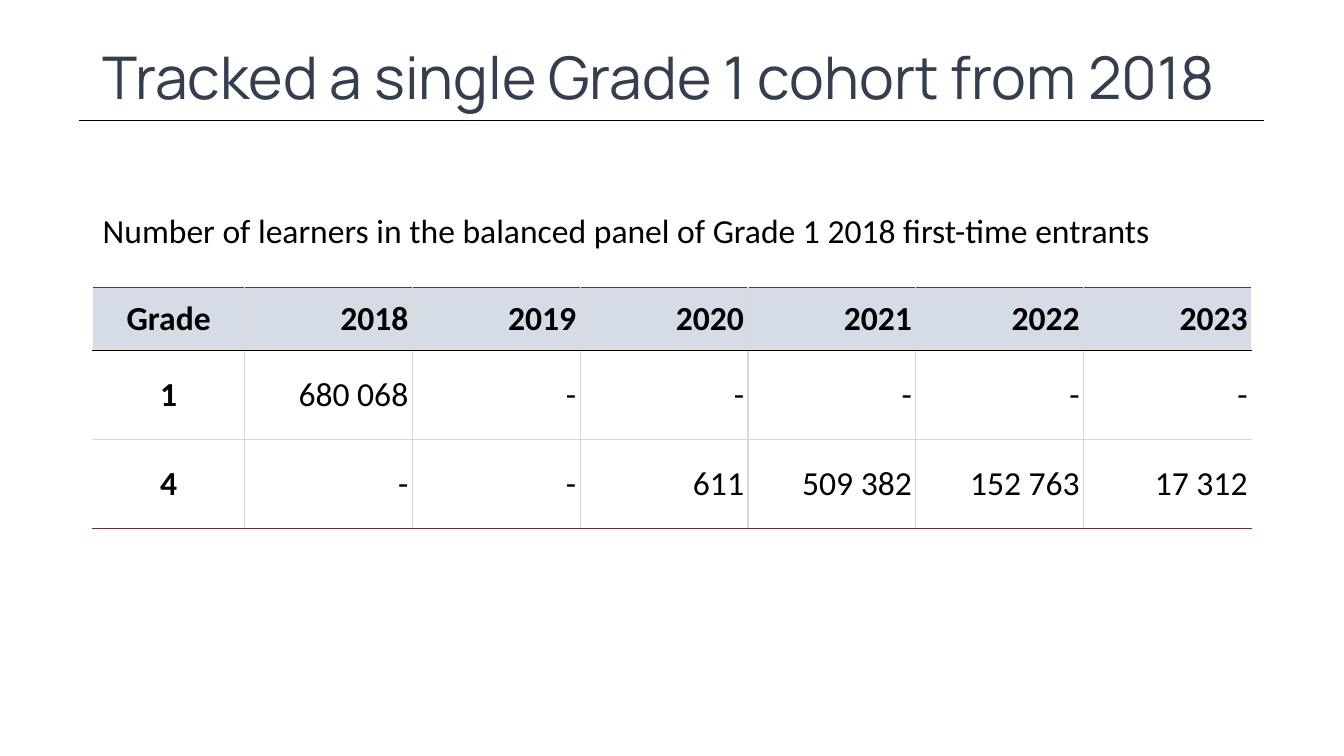
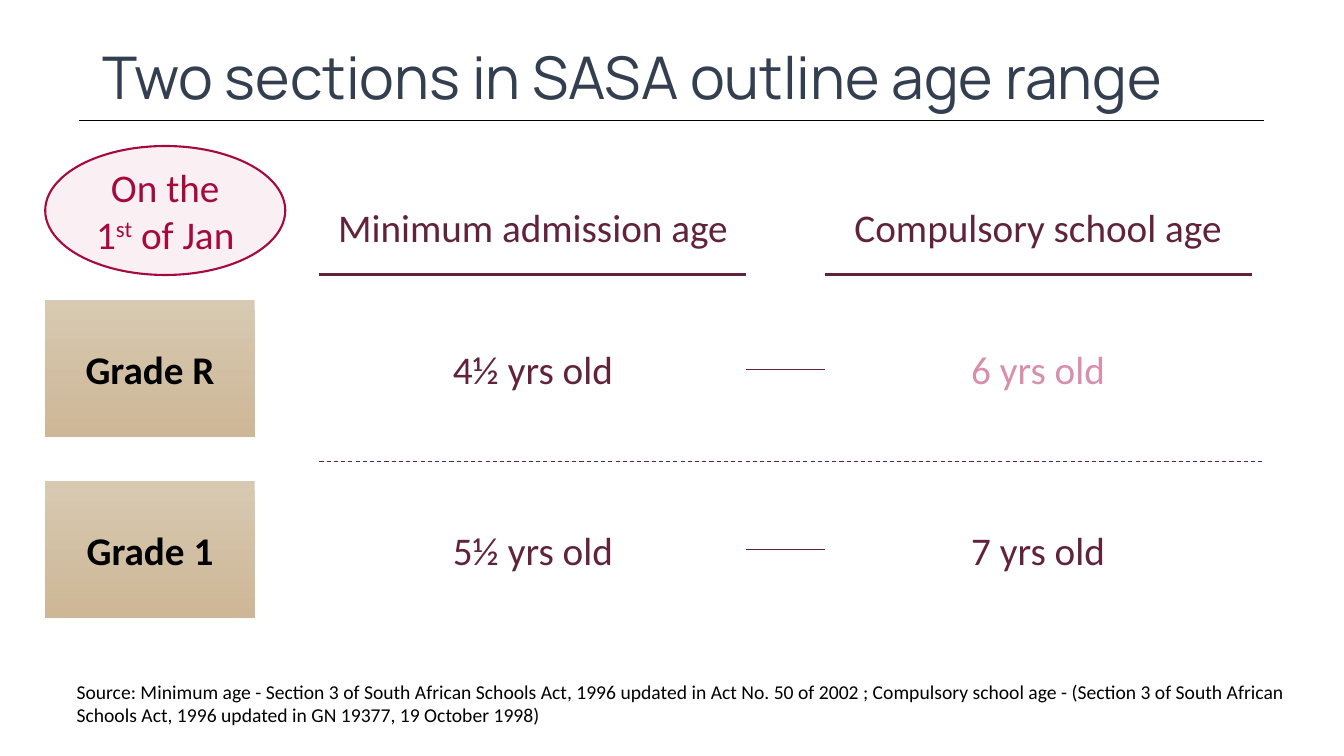
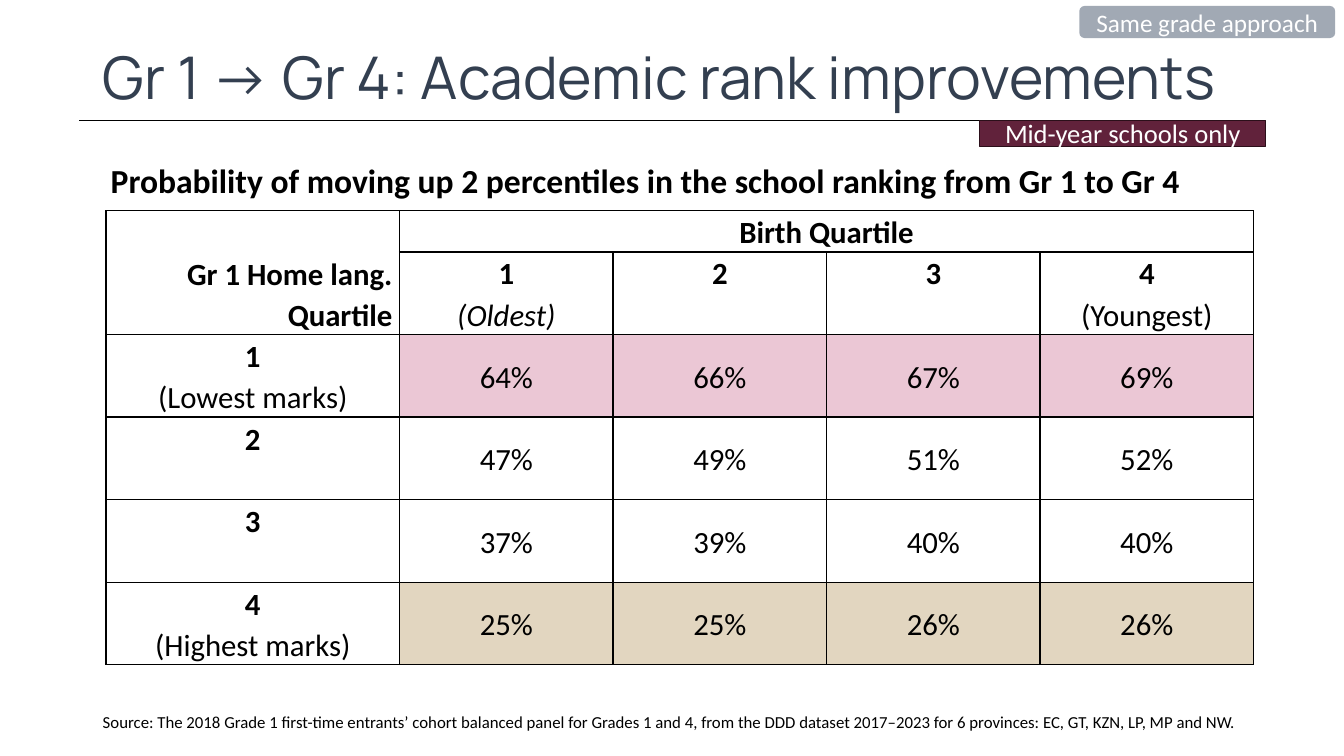
from lxml import etree
from pptx import Presentation
from pptx.dml.color import RGBColor
from pptx.enum.dml import MSO_LINE
from pptx.enum.shapes import MSO_CONNECTOR, MSO_SHAPE
from pptx.enum.text import MSO_ANCHOR, MSO_AUTO_SIZE, PP_ALIGN
from pptx.oxml.ns import qn
from pptx.util import Cm, Pt

LEFT, MID, RIGHT = PP_ALIGN.LEFT, PP_ALIGN.CENTER, PP_ALIGN.RIGHT
TOP, HALF, BASE = MSO_ANCHOR.TOP, MSO_ANCHOR.MIDDLE, MSO_ANCHOR.BOTTOM
RECT, ROUND, OVAL = MSO_SHAPE.RECTANGLE, MSO_SHAPE.ROUNDED_RECTANGLE, MSO_SHAPE.OVAL
STRAIGHT, DASH, FIXED = MSO_CONNECTOR.STRAIGHT, MSO_LINE.DASH, MSO_AUTO_SIZE.NONE

BLACK = RGBColor(0x00, 0x00, 0x00)
WHITE = RGBColor(0xFF, 0xFF, 0xFF)
NAVY = RGBColor(0x33, 0x3F, 0x50)
SLATE = RGBColor(0x44, 0x54, 0x6A)
MIST = RGBColor(0xD6, 0xDC, 0xE5)
GREY = RGBColor(0xD9, 0xD9, 0xD9)
RUST = RGBColor(0x64, 0x33, 0x35)
WINE = RGBColor(0x61, 0x22, 0x3B)
DARK = RGBColor(0x2B, 0x0F, 0x1A)
RED = RGBColor(0xA6, 0x0A, 0x3D)
BLUSH = RGBColor(0xFA, 0xF0, 0xF4)
ROSE = RGBColor(0xD8, 0x8F, 0xAC)
PINK = RGBColor(0xEB, 0xC7, 0xD5)
SAND = RGBColor(0xE2, 0xD6, 0xC0)
LIGHT = RGBColor(0xD8, 0xC9, 0xB2)
TAN = RGBColor(0xCD, 0xB7, 0x96)


class Deck:
    """Holds the shared style and the current slide."""

    head = "Manrope"
    body = "Calibri"

    def __init__(self):
        self.show = Presentation()
        self.show.slide_width, self.show.slide_height = Cm(33.87), Cm(19.05)
        self.slide = None

    def put(self, frame, paras, size, tint=BLACK, side=LEFT, lead=None, font=body):
        """Set paragraphs, each a list of (text, marks) runs with marks b, i or s."""
        if isinstance(paras, str):
            paras = [[(paras, "")]]
        for at, runs in enumerate(paras):
            para = frame.add_paragraph() if at else frame.paragraphs[0]
            para.alignment = side
            if lead:
                para.line_spacing = lead
            for text, marks in runs:
                run = para.add_run()
                run.text = text
                run.font.name, run.font.size = font, Pt(size)
                run.font.color.rgb = tint
                run.font.bold, run.font.italic = "b" in marks, "i" in marks
                if "s" in marks:
                    run.font._element.set("baseline", "30000")

    def page(self, title, wide):
        """Start a slide with its title and the rule under it."""
        self.slide = self.show.slides.add_slide(self.show.slide_layouts[5])
        self.line(2, 3.03, 31.85, 3.03, BLACK, 0.5)
        box = self.slide.shapes.title
        box.left, box.top, box.width, box.height = Cm(2.34), Cm(1.02), Cm(wide), Cm(2)
        frame = box.text_frame
        frame.auto_size, frame.vertical_anchor, frame.word_wrap = FIXED, HALF, True
        self.put(frame, title, 42, NAVY, lead=0.9, font=self.head)

    def line(self, x, y, end, low, tint, thick, dash=None):
        """Draw a straight line."""
        rule = self.slide.shapes.add_connector(STRAIGHT, Cm(x), Cm(y), Cm(end), Cm(low))
        rule.line.color.rgb, rule.line.width = tint, Pt(thick)
        if dash:
            rule.line.dash_style = dash
        etree.SubElement(rule._element.spPr, qn("a:effectLst"))

    def text(self, x, y, wide, high, paras, size, tint=BLACK, side=LEFT, anchor=HALF, pad=0.25):
        """Add a text box."""
        box = self.slide.shapes.add_textbox(Cm(x), Cm(y), Cm(wide), Cm(high))
        frame = box.text_frame
        frame.word_wrap, frame.vertical_anchor = True, anchor
        frame.margin_left = frame.margin_right = Cm(pad)
        self.put(frame, paras, size, tint, side)

    def shape(self, kind, x, y, wide, high, fill, paras, size, tint, edge=None, thick=1, alpha=None):
        """Add a shape with a plain fill, or a fade when fill is a pair."""
        item = self.slide.shapes.add_shape(kind, Cm(x), Cm(y), Cm(wide), Cm(high))
        item.shadow.inherit = False
        if isinstance(fill, RGBColor):
            item.fill.solid()
            item.fill.fore_color.rgb = fill
        else:
            item.fill.gradient()
            item.fill.gradient_angle = 270
            for stop, shade in zip(item.fill.gradient_stops, fill):
                stop.color.rgb = shade
        if alpha:
            shade = item._element.spPr.find(".//" + qn("a:srgbClr"))
            etree.SubElement(shade, qn("a:alpha")).set("val", str(alpha * 1000))
        if edge:
            item.line.color.rgb, item.line.width = edge, Pt(thick)
        else:
            item.line.fill.background()
        frame = item.text_frame
        frame.word_wrap, frame.vertical_anchor = True, HALF
        self.put(frame, paras, size, tint, MID)

    def table(self, x, y, cols, rows):
        """Add a plain table with the given column widths and row heights."""
        wide, high = Cm(sum(cols)), Cm(sum(rows))
        grid = self.slide.shapes.add_table(len(rows), len(cols), Cm(x), Cm(y), wide, high).table
        grid.first_row = grid.horz_banding = False
        for col, size in zip(grid.columns, cols):
            col.width = Cm(size)
        for row, size in zip(grid.rows, rows):
            row.height = Cm(size)
        return grid

    def cell(self, cell, edges, fill=None, pads=(0.1, 0.1)):
        """Set the borders, fill and margins of a cell."""
        props = cell._tc.get_or_add_tcPr()
        for name, tint in edges.items():
            edge = etree.SubElement(props, qn("a:ln" + name))
            edge.set("w", str(Pt(1)))
            solid = etree.SubElement(edge, qn("a:solidFill"))
            etree.SubElement(solid, qn("a:srgbClr")).set("val", str(tint))
        if fill:
            cell.fill.solid()
            cell.fill.fore_color.rgb = fill
        else:
            cell.fill.background()
        cell.margin_left = cell.margin_right = Cm(pads[0])
        cell.margin_top = cell.margin_bottom = Cm(pads[1])

    def fill(self, cell, paras, size, side, anchor, lead=None):
        """Set the text of a cell."""
        cell.vertical_anchor = anchor
        self.put(cell.text_frame, paras, size, BLACK, side, lead)


def cohort(deck):
    """Build the slide on the tracked cohort."""
    deck.page("Tracked a single Grade 1 cohort from 2018", 29.7)
    rows = [
        ["Grade", "2018", "2019", "2020", "2021", "2022", "2023"],
        ["1", "680 068", "-", "-", "-", "-", "-"],
        ["4", "-", "-", "611", "509 382", "152 763", "17 312"],
    ]
    rules = [RUST, BLACK, GREY, RUST]
    grid = deck.table(2.34, 7.24, [3.82] + [4.23] * 6, [1.6, 2.24, 2.24])
    for r, row in enumerate(rows):
        for c, word in enumerate(row):
            edges = {}
            if c:
                edges["L"] = GREY
            if c < len(row) - 1:
                edges["R"] = GREY
            edges.update(T=rules[r], B=rules[r + 1])
            cell = grid.cell(r, c)
            deck.cell(cell, edges, None if r else MIST)
            marks = "" if r and c else "b"
            deck.fill(cell, [[(word, marks)]], 24, RIGHT if c else MID, HALF)
    note = "Number of learners in the balanced panel of Grade 1 2018 first-time entrants"
    deck.text(2.34, 5.18, 29.13, 1.24, note, 24)


def ages(deck):
    """Build the slide on the age range."""
    deck.page("Two sections in SASA outline age range", 29.2)
    source = (
        "Source: Minimum age - Section 3 of South African Schools Act, 1996 updated in "
        "Act No. 50 of 2002 ; Compulsory school age - (Section 3 of South African Schools "
        "Act, 1996 updated in GN 19377, 19 October 1998)"
    )
    deck.text(1.68, 17.02, 31.65, 1.4, source, 14)
    date = [[("On the 1", ""), ("st", "s"), (" of Jan", "")]]
    deck.shape(OVAL, 1.14, 3.68, 6.05, 3.25, BLUSH, date, 28, RED, RED, 1.5)
    cols, wide, high = (8.05, 20.78), 10.76, 3.45
    for x, word in zip(cols, ("Minimum admission age", "Compulsory school age")):
        deck.text(x, 4.72, wide, 2, word, 28, WINE, MID, pad=0)
        deck.line(x, 6.92, x + wide, 6.92, WINE, 2.25)
    deck.line(cols[0], 11.63, 31.8, 11.63, WINE, 0.75, DASH)
    rows = [
        (7.57, "Grade R", "4½ yrs old", "6 yrs old", ROSE),
        (12.12, "Grade 1", "5½ yrs old", "7 yrs old", WINE),
    ]
    for y, grade, low, top, tint in rows:
        deck.shape(RECT, 1.14, y, 5.28, high, (LIGHT, TAN), [[(grade, "b")]], 28, BLACK)
        deck.text(cols[0], y, wide, high, low, 28, WINE, MID)
        deck.text(cols[1], y, wide, high, top, 28, tint, MID)
        deck.line(cols[0] + wide, y + high / 2, cols[1], y + high / 2, WINE, 0.5)


def ranks(deck):
    """Build the slide on the rank improvements."""
    deck.page("Gr 1 → Gr 4: Academic rank improvements", 30.63)
    deck.shape(ROUND, 27.2, 0.15, 6.45, 0.81, SLATE, "Same grade approach", 18, WHITE, alpha=50)
    lead = "Probability of moving up 2 percentiles in the school ranking from Gr 1 to Gr 4"
    deck.text(2.54, 3.91, 30.63, 1.27, [[(lead, "b")]], 24)
    grid = deck.table(2.67, 5.31, [7.4] + [5.38] * 4, [1.04] + [2.08] * 5)
    fills = {2: PINK, 5: SAND}
    edges = dict.fromkeys("LRTB", BLACK)
    for r in range(6):
        for c in range(5):
            deck.cell(grid.cell(r, c), edges, fills.get(r) if c else None, (0.18, 0))
    grid.cell(0, 0).merge(grid.cell(1, 0))
    grid.cell(0, 1).merge(grid.cell(0, 4))
    deck.fill(grid.cell(0, 0), [[("Gr 1 Home lang. Quartile", "b")]], 22, RIGHT, BASE, 1.1)
    deck.fill(grid.cell(0, 1), [[("Birth Quartile", "b")]], 22, MID, BASE, 1.1)
    births = {1: ("(Oldest)", "i"), 4: ("(Youngest)", "")}
    marks = {1: ("(Lowest marks)", ""), 4: ("(Highest marks)", "")}
    for n in range(1, 5):
        for cell, notes in ((grid.cell(1, n), births), (grid.cell(n + 1, 0), marks)):
            paras = [[(str(n), "b")]] + ([[notes[n]]] if n in notes else [])
            deck.fill(cell, paras, 22, MID, TOP, 1.1)
    odds = [(64, 66, 67, 69), (47, 49, 51, 52), (37, 39, 40, 40), (25, 25, 26, 26)]
    for r, row in enumerate(odds, 2):
        for c, odd in enumerate(row, 1):
            deck.fill(grid.cell(r, c), f"{odd}%", 22, MID, HALF, 1.1)
    deck.shape(RECT, 24.69, 3.03, 7.21, 0.66, WINE, "Mid-year schools only", 19, WHITE, DARK)
    source = (
        "Source: The 2018 Grade 1 first-time entrants’ cohort balanced panel for Grades 1 "
        "and 4, from the DDD dataset 2017–2023 for 6 provinces: EC, GT, KZN, LP, MP and NW."
    )
    deck.text(2.34, 17.8, 29.21, 0.77, source, 12, anchor=TOP)


def main():
    """Build and save the deck."""
    deck = Deck()
    for build in (cohort, ages, ranks):
        build(deck)
    deck.show.save("out.pptx")


if __name__ == "__main__":
    main()
